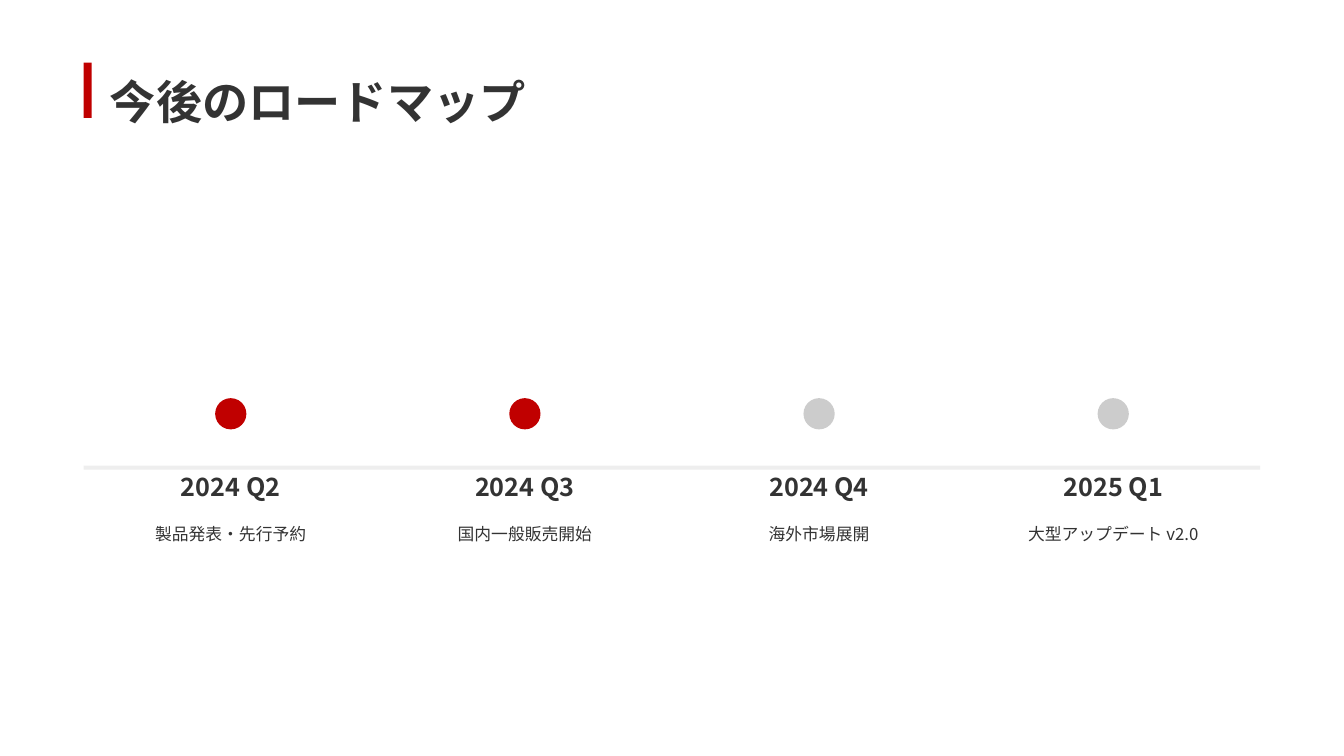
from dataclasses import dataclass

import lxml.etree
import pptx
import pptx.dml.color
import pptx.enum.shapes
import pptx.enum.text
import pptx.oxml.ns
import pptx.util
from pptx.util import Inches

SHAPE = pptx.enum.shapes.MSO_SHAPE
ALIGN = pptx.enum.text.PP_ALIGN


@dataclass(frozen=True)
class Theme:
    font: str = "Noto Sans CJK JP"
    text: str = "333333"
    accent: str = "C00000"
    pending: str = "CCCCCC"
    axis: str = "EEEEEE"
    title_size: int = 33
    period_size: int = 18
    detail_size: int = 12


@dataclass(frozen=True)
class Milestone:
    period: str
    detail: str
    active: bool


@dataclass(frozen=True)
class Box:
    left: float
    top: float
    width: float
    height: float

    def lengths(self) -> tuple:
        return tuple(Inches(v) for v in (self.left, self.top, self.width, self.height))


THEME = Theme()
MILESTONES = (
    Milestone("2024 Q2", "製品発表・先行予約", True),
    Milestone("2024 Q3", "国内一般販売開始", True),
    Milestone("2024 Q4", "海外市場展開", False),
    Milestone("2025 Q1", "大型アップデート v2.0", False),
)
MARGIN = 0.83
CONTENT_WIDTH = 11.67
COLUMN = CONTENT_WIDTH / len(MILESTONES)
TITLE_TOP, TITLE_HEIGHT = 0.62, 0.55
AXIS_TOP = 4.62
DOT_TOP, DOT_SIZE = 3.95, 0.31
PERIOD_WIDTH = 3.06


def rgb(color: str) -> pptx.dml.color.RGBColor:
    return pptx.dml.color.RGBColor.from_string(color)


def add_block(s, kind, box: Box, color: str):
    """Add a filled shape without outline or shadow."""
    sp = s.shapes.add_shape(kind, *box.lengths())
    sp.shadow.inherit = False
    sp.fill.solid()
    sp.fill.fore_color.rgb = rgb(color)
    sp.line.fill.background()
    return sp


def write(sp, text: str, size: int, spacing: float, bold: bool, align) -> None:
    """Fill a shape with one paragraph in the theme font."""
    tf = sp.text_frame
    tf.margin_left = tf.margin_top = tf.margin_right = tf.margin_bottom = 0
    tf.word_wrap = True
    tf.auto_size = pptx.enum.text.MSO_AUTO_SIZE.SHAPE_TO_FIT_TEXT
    tf.vertical_anchor = pptx.enum.text.MSO_ANCHOR.TOP
    p = tf.paragraphs[0]
    p.text = text
    p.alignment = align
    p.line_spacing = spacing
    p.font.size = pptx.util.Pt(size)
    p.font.bold = bold
    p.font.color.rgb = rgb(THEME.text)
    p.font.name = THEME.font
    props = p._p.pPr.find(pptx.oxml.ns.qn("a:defRPr"))
    lxml.etree.SubElement(props, pptx.oxml.ns.qn("a:ea"), typeface=THEME.font)


def add_label(s, box: Box, text: str, size: int, spacing: float, bold: bool) -> None:
    sp = s.shapes.add_textbox(*box.lengths())
    write(sp, text, size, spacing, bold, ALIGN.CENTER)


def add_title(s, text: str) -> None:
    sp = s.shapes.title
    box = Box(1.09, TITLE_TOP, 11.98, TITLE_HEIGHT)
    sp.left, sp.top, sp.width, sp.height = box.lengths()
    write(sp, text, THEME.title_size, 1.2, True, ALIGN.LEFT)
    add_block(s, SHAPE.RECTANGLE, Box(MARGIN, TITLE_TOP, 0.08, TITLE_HEIGHT), THEME.accent)


def add_milestone(s, index: int, item: Milestone) -> None:
    left = MARGIN + index * COLUMN
    center = left + COLUMN / 2
    add_label(s, Box(center - PERIOD_WIDTH / 2, AXIS_TOP, PERIOD_WIDTH, 0.3),
              item.period, THEME.period_size, 1.2, True)
    add_label(s, Box(left, 5.08, COLUMN, 0.27), item.detail, THEME.detail_size, 1.6, False)
    dot = add_block(s, SHAPE.ROUNDED_RECTANGLE,
                    Box(center - DOT_SIZE / 2, DOT_TOP, DOT_SIZE, DOT_SIZE),
                    THEME.accent if item.active else THEME.pending)
    dot.adjustments[0] = 0.5


def main() -> None:
    prs = pptx.Presentation()
    prs.slide_width, prs.slide_height = Inches(13.33), Inches(7.5)
    s = prs.slides.add_slide(prs.slide_layouts.get_by_name("Title Only"))
    add_title(s, "今後のロードマップ")
    add_block(s, SHAPE.RECTANGLE, Box(MARGIN, AXIS_TOP, CONTENT_WIDTH, 0.04), THEME.axis)
    for index, item in enumerate(MILESTONES):
        add_milestone(s, index, item)
    prs.save("out.pptx")


if __name__ == "__main__":
    main()
